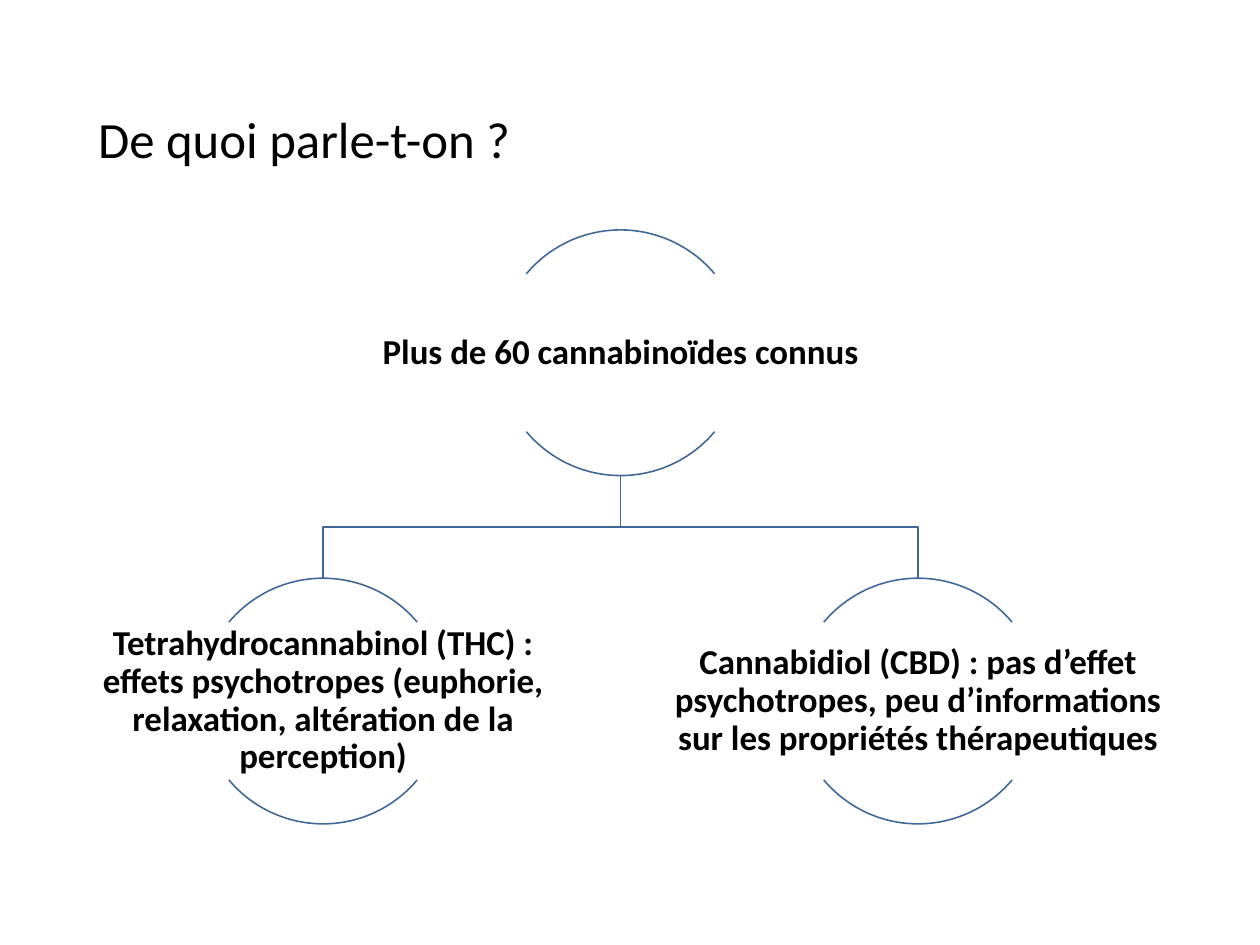
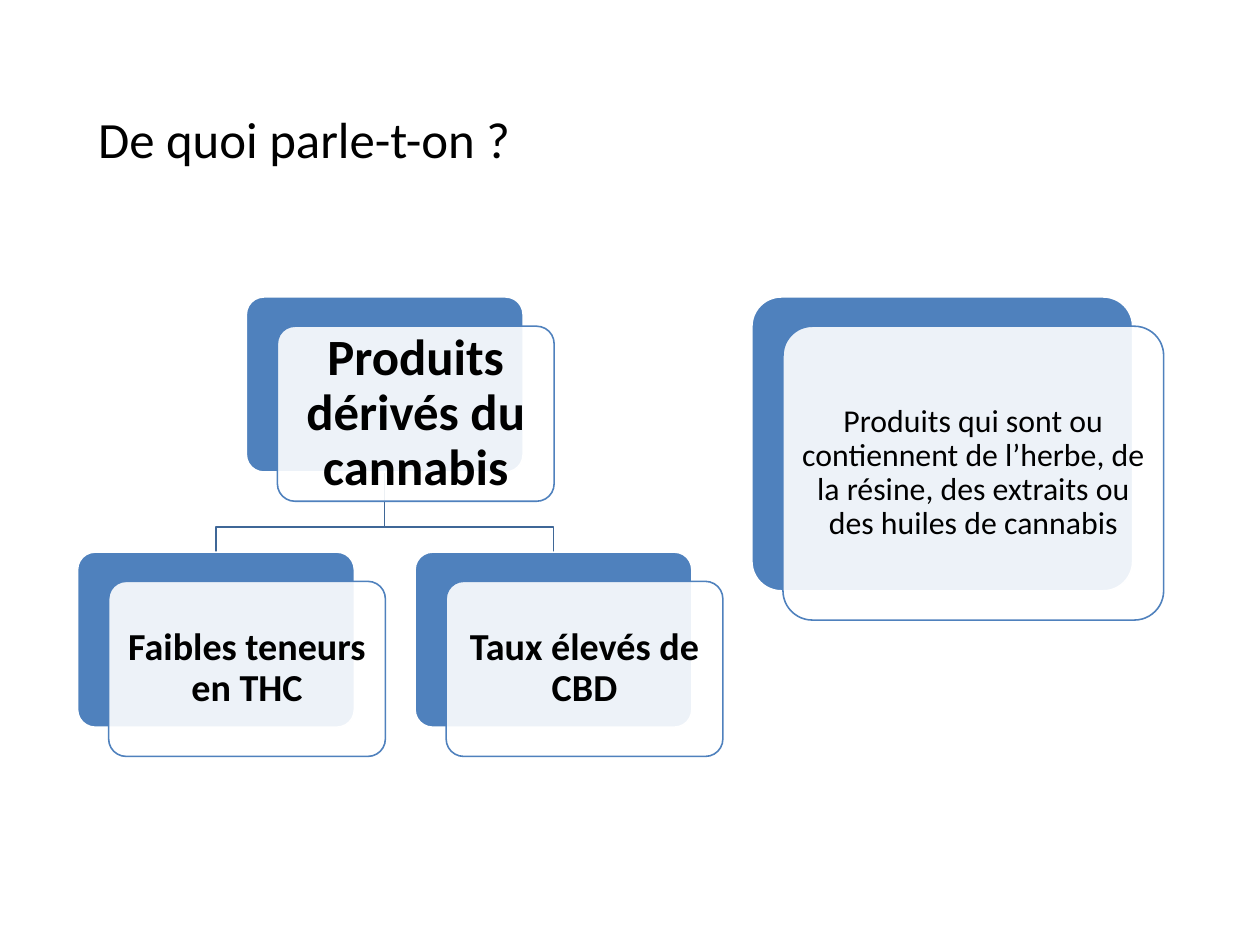
from lxml.etree import SubElement
from pptx import Presentation
from pptx.dml.color import RGBColor
from pptx.enum.shapes import MSO_SHAPE
from pptx.enum.text import MSO_ANCHOR, PP_ALIGN
from pptx.oxml.ns import qn
from pptx.util import Cm, Pt

BLACK = RGBColor(0x00, 0x00, 0x00)
WHITE = RGBColor(0xFF, 0xFF, 0xFF)
BLUE = RGBColor(0x4F, 0x81, 0xBD)
DARK_BLUE = RGBColor(0x3F, 0x67, 0x97)
FONT = "Calibri"

TITLE = "De quoi parle-t-on ?"

# Circle tree, in cm: (centre x, top, text)
CIRCLE = 5.46
LABEL_W, LABEL_H = 10.92, 3.5
CIRCLE_ROOT = (13.79, 5.11, "Plus de 60 cannabinoïdes connus")
CIRCLE_CHILDREN = [
    (7.18, 12.85, "Tetrahydrocannabinol (THC) : effets psychotropes "
                  "(euphorie, relaxation, altération de la perception)"),
    (20.4, 12.85, "Cannabidiol (CBD) : pas d’effet psychotropes, peu "
                  "d’informations sur les propriétés thérapeutiques"),
]
ARCS = [(220, 320), (40, 140)]

# Card tree, in cm: centre x, top, size, text and its format
SMALL, LARGE = (6.15, 3.89), (8.46, 6.53)
SHIFT_X, SHIFT_Y = 0.69, 0.65
CORNER = 0.1
CARD_ROOT = (8.55, 6.6, SMALL, "Produits dérivés du cannabis", 32, True)
CARD_CHILDREN = [
    (4.8, 12.27, SMALL, "Faibles teneurs en THC", 24, True),
    (12.3, 12.27, SMALL, "Taux élevés de CBD", 24, True),
]
CARD_NOTE = (20.94, 6.6, LARGE,
             "Produits qui sont ou contiennent de l’herbe, de la résine, "
             "des extraits ou des huiles de cannabis", 20, False)
BEND_Y = 11.71


def add_text(slide, text, x, y, w, h, size=22, bold=False,
             align=PP_ALIGN.CENTER, margin=0.05):
    tf = slide.shapes.add_textbox(Cm(x), Cm(y), Cm(w), Cm(h)).text_frame
    tf.word_wrap = True
    tf.vertical_anchor = MSO_ANCHOR.MIDDLE
    tf.margin_left = tf.margin_right = Cm(margin)
    tf.margin_top = tf.margin_bottom = Cm(margin)
    p = tf.paragraphs[0]
    p.alignment = align
    p.line_spacing = 0.9
    r = p.add_run()
    r.text = text
    r.font.name = FONT
    r.font.size = Pt(size)
    r.font.bold = bold
    r.font.color.rgb = BLACK


def set_style(sp, line, fill=None, opacity=100):
    sp.shadow.inherit = False
    sp.line.color.rgb = line
    sp.line.width = Pt(1)
    if fill is None:
        sp.fill.background()
        return
    sp.fill.solid()
    sp.fill.fore_color.rgb = fill
    if opacity < 100:
        color = sp.fill._xPr.find(f"{qn('a:solidFill')}/{qn('a:srgbClr')}")
        SubElement(color, qn("a:alpha"), val=str(opacity * 1000))


def add_branch(slide, x1, y1, x2, y2, bend_y):
    """Draw an open line that runs down, across at bend_y, and down again."""
    builder = slide.shapes.build_freeform(Cm(x1), Cm(y1))
    points = [(x1, bend_y), (x2, bend_y), (x2, y2)]
    builder.add_line_segments([(Cm(x), Cm(y)) for x, y in points], close=False)
    set_style(builder.convert_to_shape(), DARK_BLUE)


def add_circle(slide, cx, top, text):
    """Draw a label between the top and bottom arcs of one circle."""
    for start, end in ARCS:
        sp = slide.shapes.add_shape(MSO_SHAPE.ARC, Cm(cx - CIRCLE / 2), Cm(top),
                                    Cm(CIRCLE), Cm(CIRCLE))
        # Angles are stored in 60000ths of a degree, adjustments in 100000ths
        sp.adjustments[0], sp.adjustments[1] = start * 0.6, end * 0.6
        set_style(sp, DARK_BLUE)
    add_text(slide, text, cx - LABEL_W / 2, top + (CIRCLE - LABEL_H) / 2,
             LABEL_W, LABEL_H, bold=True)


def add_card(slide, cx, top, card_size, text, size, bold):
    """Draw a blue card with a shifted, translucent text card over it."""
    w, h = card_size
    x = cx - w / 2
    layers = [(x, top, BLUE, WHITE, 100),
              (x + SHIFT_X, top + SHIFT_Y, WHITE, BLUE, 90)]
    for left, y, fill, line, opacity in layers:
        sp = slide.shapes.add_shape(MSO_SHAPE.ROUNDED_RECTANGLE,
                                    Cm(left), Cm(y), Cm(w), Cm(h))
        sp.adjustments[0] = CORNER
        set_style(sp, line, fill, opacity)
    inset = 0.29 * CORNER * min(w, h)
    add_text(slide, text, x + SHIFT_X + inset, top + SHIFT_Y + inset,
             w - 2 * inset, h - 2 * inset, size, bold, margin=size / 100)


def add_titled_slide(prs):
    slide = prs.slides.add_slide(prs.slide_layouts[6])
    add_text(slide, TITLE, 1.93, 1.12, 24.16, 4.06, size=32,
             align=PP_ALIGN.LEFT, margin=0.25)
    return slide


def build_circles(prs):
    slide = add_titled_slide(prs)
    root_x, root_top, _ = CIRCLE_ROOT
    bottom = root_top + CIRCLE
    for cx, top, _ in CIRCLE_CHILDREN:
        add_branch(slide, root_x, bottom, cx, top, (bottom + top) / 2)
    for circle in [CIRCLE_ROOT, *CIRCLE_CHILDREN]:
        add_circle(slide, *circle)


def build_cards(prs):
    slide = add_titled_slide(prs)
    root_x, root_top, (_, root_h) = CARD_ROOT[:3]
    for cx, top, *_ in CARD_CHILDREN:
        add_branch(slide, root_x, root_top + root_h, cx, top, BEND_Y)
    for card in [CARD_ROOT, *CARD_CHILDREN, CARD_NOTE]:
        add_card(slide, *card)


def main():
    prs = Presentation()
    prs.slide_width, prs.slide_height = Cm(28), Cm(21)
    build_circles(prs)
    build_cards(prs)
    prs.save("out.pptx")


if __name__ == "__main__":
    main()
